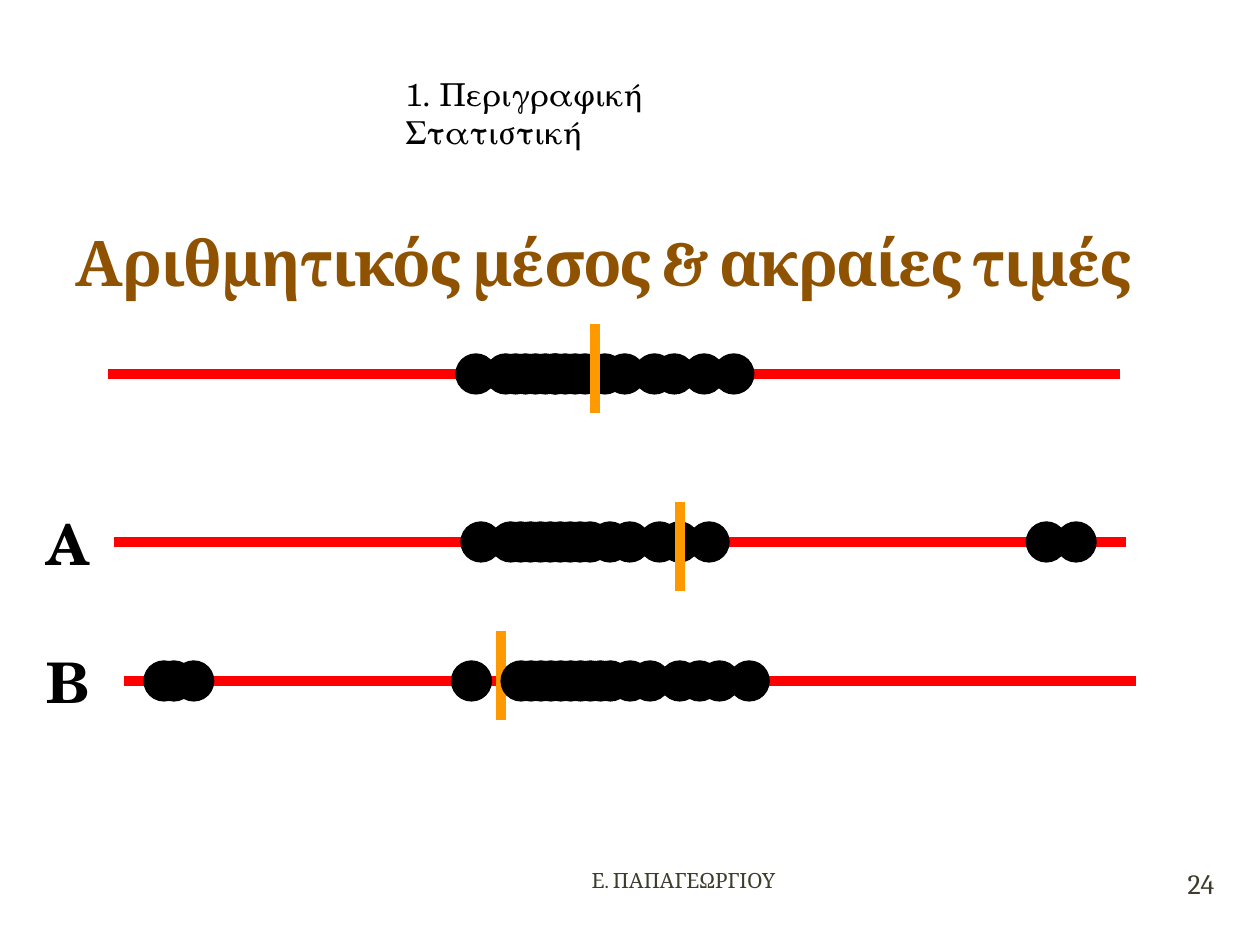
from pptx import Presentation
from pptx.dml.color import RGBColor
from pptx.enum.shapes import MSO_CONNECTOR as CONN, MSO_SHAPE as SHAPE
from pptx.enum.text import MSO_ANCHOR as ANCHOR, MSO_AUTO_SIZE as AUTO, PP_ALIGN as ALIGN
from pptx.util import Emu, Pt
from lxml.etree import SubElement
from pptx.oxml.ns import qn

# Content: px, 126 to the inch
PX = 914400 // 126
DOT, STEP, AXIS_W = 40, 9.92, 1012
SERIF, BODY = "TeX Gyre Schola", "Cambria"
TITLE = "Αριθμητικός μέσος & ακραίες τιμές"
CORE = [3, 4, 5, 6, 7, 8, 9, 10, 11, 13, 15, 18, 20, 23]

# Each row: axis start and height, mean mark (x, top), first dot,
# dot offsets in steps, whether the dots cover the mean mark
ROWS = [
    dict(axis=(124, 681), mean=(501, 631), first=144,
         dots=[0, 1, 3, 31, 36] + [n + 34 for n in CORE if n < 23] + [56, 59],
         dots_on_top=True),
    dict(axis=(108, 374), mean=(595, 324), first=456,
         dots=[0] + CORE + [8, 26], dots_on_top=False),
    dict(axis=(114, 542), mean=(680, 502), first=461,
         dots=[0] + CORE + [57, 60], dots_on_top=False),
]

# Text, box, font, size, colour, bold, alignment, anchor, inset
TEXTS = [
    ("Α", (34, 503, 59, 79), SERIF, 32, "000000", True, ALIGN.LEFT, ANCHOR.TOP, True),
    ("Β", (34, 641, 59, 79), SERIF, 32, "000000", True, ALIGN.LEFT, ANCHOR.TOP, True),
    ("Ε. ΠΑΠΑΓΕΩΡΓΙΟΥ", (294, 854, 494, 53), BODY, 12, "3E3D2D", False,
     ALIGN.RIGHT, ANCHOR.MIDDLE, True),
    ("1. Περιγραφική Στατιστική", (393, 69, 420, 50), SERIF, 18, "000000", False,
     ALIGN.LEFT, ANCHOR.TOP, True),
    ("24", (1159, 852, 84, 63), BODY, 16, "3E3D2D", False,
     ALIGN.CENTER, ANCHOR.MIDDLE, False),
]


def px(n):
    return Emu(round(n * PX))


def rgb(color):
    return RGBColor.from_string(color)


def write(tf, text, font, size, color, bold, align, anchor):
    tf.word_wrap = True
    tf.auto_size = AUTO.NONE
    tf.vertical_anchor = anchor
    p = tf.paragraphs[0]
    p.alignment = align
    r = p.add_run()
    r.text = text
    r.font.name, r.font.size, r.font.bold = font, Pt(size), bold
    r.font.color.rgb = rgb(color)
    return r


def add_line(slide, x1, y1, x2, y2, color):
    line = slide.shapes.add_connector(CONN.STRAIGHT, px(x1), px(y1), px(x2), px(y2))
    line.line.color.rgb = rgb(color)
    line.line.width = Pt(6)
    SubElement(line._element.spPr, qn("a:effectLst"))


def add_dots(slide, row):
    top = row["axis"][1] - DOT / 2
    for n in row["dots"]:
        s = slide.shapes.add_shape(SHAPE.OVAL, px(row["first"] + n * STEP), px(top),
                                   px(DOT), px(DOT))
        s.shadow.inherit = False
        s.fill.solid()
        s.fill.fore_color.rgb = rgb("000000")
        s.line.color.rgb = rgb("000000")
        s.line.width = Pt(0.75)


def add_mean(slide, row):
    x, top = row["mean"]
    add_line(slide, x, top, x, top + 89, "FF9900")


def main():
    prs = Presentation()
    prs.slide_width, prs.slide_height = px(1260), px(945)
    slide = prs.slides.add_slide(prs.slide_layouts[5])

    # Title
    title = slide.shapes.title
    title.left, title.top, title.width, title.height = map(px, (63, 158, 1134, 147))
    r = write(title.text_frame, TITLE, BODY, 36, "8F5201", True, ALIGN.LEFT, ANCHOR.BOTTOM)
    r.font._element.set("spc", "-100")

    # Dot plots with their mean marks
    for row in ROWS:
        x, y = row["axis"]
        add_line(slide, x, y, x + AXIS_W, y, "FF0000")
        layers = [add_dots, add_mean]
        for draw in reversed(layers) if row["dots_on_top"] else layers:
            draw(slide, row)

    # Row labels, heading, footer and slide number
    for text, box, font, size, color, bold, align, anchor, inset in TEXTS:
        tf = slide.shapes.add_textbox(*map(px, box)).text_frame
        if not inset:
            tf.margin_left = tf.margin_right = tf.margin_top = tf.margin_bottom = 0
        write(tf, text, font, size, color, bold, align, anchor)

    prs.save("out.pptx")


if __name__ == "__main__":
    main()
